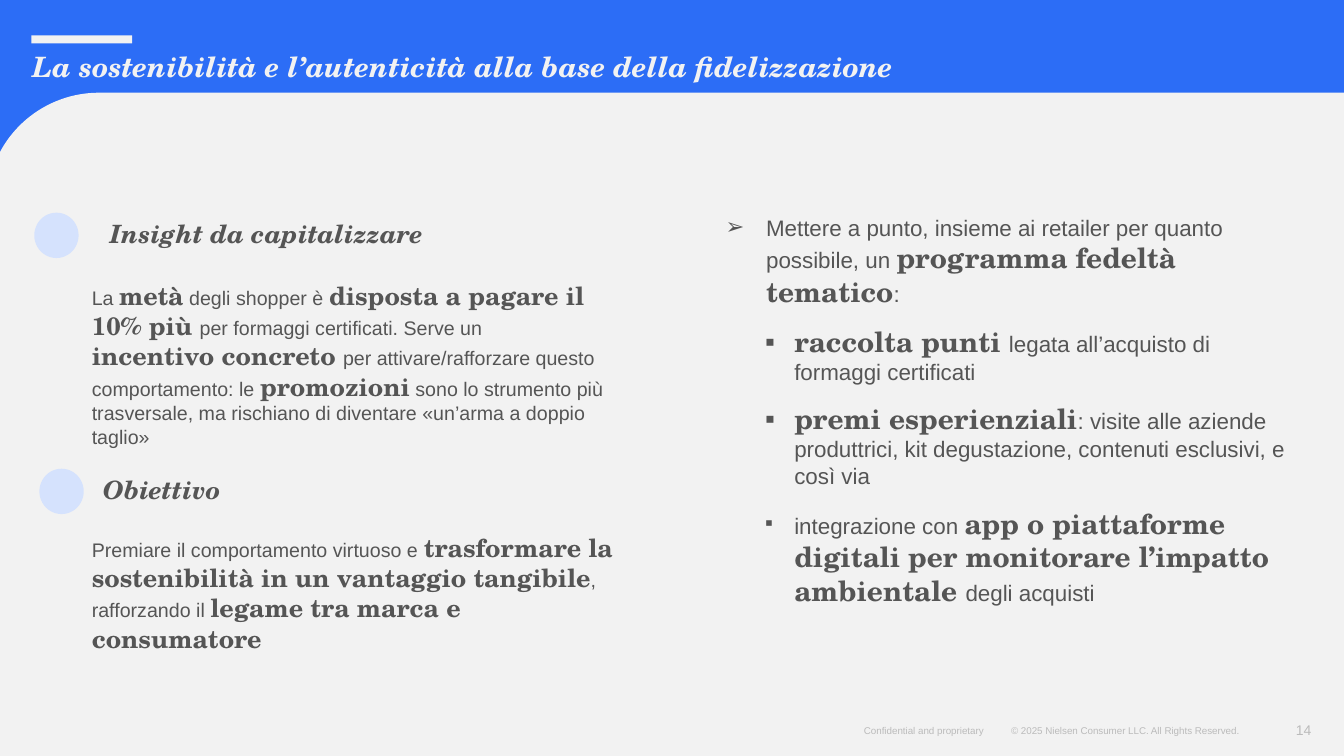
"""Builds a slide on sustainability and loyalty: insight, goal and proposed programme."""
from lxml import etree
from pptx import Presentation
from pptx.dml.color import RGBColor
from pptx.enum.shapes import MSO_SHAPE
from pptx.enum.text import MSO_ANCHOR, MSO_AUTO_SIZE, PP_ALIGN
from pptx.oxml.ns import qn
from pptx.util import Inches, Pt

RECT, PANEL, OVAL = MSO_SHAPE.RECTANGLE, MSO_SHAPE.ROUND_2_DIAG_RECTANGLE, MSO_SHAPE.OVAL
TOP, MIDDLE = MSO_ANCHOR.TOP, MSO_ANCHOR.MIDDLE
LEFT, RIGHT = PP_ALIGN.LEFT, PP_ALIGN.RIGHT
NO_FIT = MSO_AUTO_SIZE.NONE
NO_TABLE_STYLE = "{2D5ABB26-0587-4C30-8999-92F81FD0307C}"
SANS, SERIF = "Arial", "TeX Gyre Schola"
COLORS = {"blue": "2C6DF6", "paper": "F2F2F2", "dot": "D5E2FD", "text": "555555", "muted": "BBBBBB"}


def write(p, text, size=14, strong=None, font=SANS, color="text", bold=False, italic=False,
          align=LEFT, before=0, after=0, line=None):
    """Fill a paragraph; parts between ** are set in bold serif at the strong size."""
    p.alignment = align
    p.space_before, p.space_after = Pt(before), Pt(after)
    if line:
        p.line_spacing = Pt(line)
    for i, part in enumerate(text.split("**")):
        if not part:
            continue
        marked = i % 2 == 1
        r = p.add_run()
        r.text = part
        r.font.name = SERIF if marked else font
        r.font.size = Pt(strong if marked else size)
        r.font.bold = marked or bold
        r.font.italic = italic
        r.font.color.rgb = RGBColor.from_string(COLORS[color])


class Page:
    """Draws elements on one slide; boxes are percentages of the slide's size."""

    def __init__(self, prs):
        self.prs = prs
        self.slide = prs.slides.add_slide(prs.slide_layouts[1])
        self.shapes = self.slide.shapes

    def x(self, share):
        return round(self.prs.slide_width * share / 100)

    def y(self, share):
        return round(self.prs.slide_height * share / 100)

    def box(self, left, top, width, height):
        return self.x(left), self.y(top), self.x(width), self.y(height)

    def shape(self, kind, box, color):
        sp = self.shapes.add_shape(kind, *self.box(*box))
        sp.shadow.inherit = False
        sp.fill.solid()
        sp.fill.fore_color.rgb = RGBColor.from_string(COLORS[color])
        sp.line.fill.background()

    def frame(self, sp, anchor=TOP, margins=(0, 0, 0, 0), wrap=True):
        tf = sp.text_frame
        tf.auto_size = NO_FIT
        tf.word_wrap = wrap
        tf.vertical_anchor = anchor
        tf.margin_left, tf.margin_top, tf.margin_right, tf.margin_bottom = map(Inches, margins)
        return tf

    def text(self, box, text, anchor=TOP, margins=(0, 0, 0, 0), wrap=True, **fmt):
        sp = self.shapes.add_textbox(*self.box(*box))
        write(self.frame(sp, anchor, margins, wrap).paragraphs[0], text, **fmt)

    def placeholder(self, idx, box, **layout):
        sp = self.slide.placeholders[idx]
        sp.left, sp.top, sp.width, sp.height = self.box(*box)
        self.shapes._spTree.append(sp._element)
        return self.frame(sp, **layout)

    def title(self, box, text, **fmt):
        write(self.placeholder(0, box).paragraphs[0], text, **fmt)

    def bullets(self, box, items, **fmt):
        tf = self.placeholder(1, box, anchor=MIDDLE, margins=(0, 0.05, 0.1, 0.05))
        for i, (level, text) in enumerate(items):
            p = tf.add_paragraph() if i else tf.paragraphs[0]
            p.level = level
            char, indent, hanging = (("➢", 3, 3), ("▪", 5.1, 2.18))[level]
            pPr = p._p.get_or_add_pPr()
            pPr.set("marL", str(self.x(indent)))
            pPr.set("indent", str(-self.x(hanging)))
            etree.SubElement(pPr, qn("a:buFont")).set("typeface", SANS)
            etree.SubElement(pPr, qn("a:buChar")).set("char", char)
            write(p, text, before=12 if i else 0, **fmt)

    def heading(self, box, text, margin=0.1):
        table = self.shapes.add_table(1, 1, *self.box(*box)).table
        table.first_row = table.horz_banding = False
        table._tbl.tblPr.find(qn("a:tableStyleId")).text = NO_TABLE_STYLE
        cell = table.cell(0, 0)
        cell.fill.background()
        cell.vertical_anchor = MIDDLE
        cell.margin_left = Inches(margin)
        write(cell.text_frame.paragraphs[0], text, size=18, font=SERIF,
              bold=True, italic=True, line=24)


def main():
    prs = Presentation()
    prs.slide_width, prs.slide_height = Inches(13.33), Inches(7.5)
    page = Page(prs)

    page.shape(RECT, (0, 0, 100, 100), "blue")
    page.shape(PANEL, (-0.98, 12.27, 106.13, 88.93), "paper")
    page.shape(RECT, (2.33, 4.67, 7.5, 1.07), "paper")
    page.text((64.28, 95.87, 9, 1.6), "Confidential and proprietary",
              wrap=False, size=7, color="muted")
    page.text((75.23, 95.2, 18.6, 2.93), "© 2025 Nielsen Consumer LLC. All Rights Reserved.",
              margins=(0, 0.05, 0, 0.05), size=7, color="muted")
    page.text((94.28, 94.53, 3.3, 4.13), "14", anchor=MIDDLE, size=10, color="muted", align=RIGHT)

    page.title((2.4, 6.53, 94.5, 5.87),
               "La sostenibilità e l’autenticità alla base della fidelizzazione",
               size=20, font=SERIF, color="paper", bold=True, italic=True)
    page.bullets((54, 21.07, 43.65, 66.4), [
        (0, "Mettere a punto, insieme ai retailer per quanto possibile, un "
            "**programma fedeltà tematico**:"),
        (1, "**raccolta punti **legata all’acquisto di formaggi certificati"),
        (1, "**premi esperienziali**: visite alle aziende produttrici, kit degustazione, "
            "contenuti esclusivi, e così via"),
        (1, "integrazione con **app o piattaforme digitali per monitorare l’impatto "
            "ambientale **degli acquisti"),
    ], size=16, strong=20)

    page.text((6.83, 37.07, 38.25, 19.33),
              "La **metà** degli shopper è **disposta a pagare il 10% più **per formaggi "
              "certificati. Serve un **incentivo concreto **per attivare/rafforzare questo "
              "comportamento: le **promozioni** sono lo strumento più trasversale, ma "
              "rischiano di diventare «un’arma a doppio taglio»", strong=18, after=6)
    page.text((6.83, 70.4, 40.35, 16.13),
              "Premiare il comportamento virtuoso e **trasformare la sostenibilità in un "
              "vantaggio tangibile**, rafforzando il **legame tra marca e consumatore**",
              strong=18, after=6)

    for left, top in ((2.55, 28.13), (2.93, 62)):
        page.shape(OVAL, (left, top, 3.3, 6), "dot")
    page.heading((6.9, 27.73, 38.93, 6.93), "Insight da capitalizzare", margin=0.17)
    page.heading((6.9, 62, 39.08, 6.27), "Obiettivo")

    prs.save("out.pptx")


if __name__ == "__main__":
    main()
